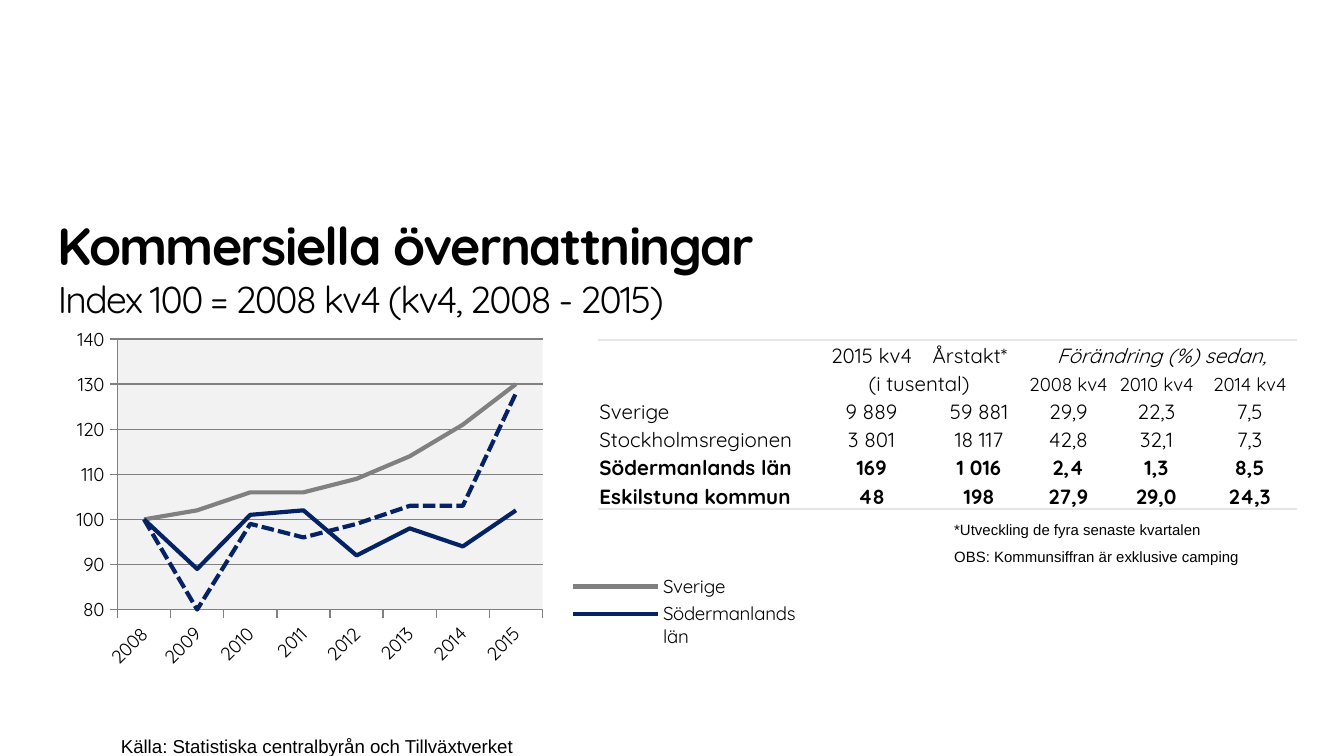
from pptx import Presentation, util as u
from pptx.chart.data import CategoryChartData
from pptx.dml.color import RGBColor
from pptx.enum import chart as ch, dml, text
from pptx.oxml import parse_xml
from pptx.oxml.ns import nsdecls, qn

THEME = {
    "ink": "000000", "grey": "808080", "navy": "052364",
    "rule": "E6E6E6", "plot": "F2F2F2",
    "face": "Quicksand", "note_face": "Arial",
    "title": 28, "subtitle": 20, "table": 11, "small": 10, "note": 8,
}
WIDTH = 10
HEIGHT = WIDTH * 9 / 16

TITLE = [("Kommersiella övernattningar", "title", True),
         ("Index 100 = 2008 kv4 (kv4, 2008 - 2015)", "subtitle", False)]
SOURCE = ["Källa: Statistiska centralbyrån och Tillväxtverket"]
REMARKS = ["*Utveckling de fyra senaste kvartalen",
           "OBS: Kommunsiffran är exklusive camping"]

YEARS = [str(year) for year in range(2008, 2016)]
INDEX = [  # region, colour, dash, values
    ("Sverige", "grey", None, (100, 102, 106, 106, 109, 114, 121, 130)),
    ("Södermanlands län", "navy", None, (100, 89, 101, 102, 92, 98, 94, 102)),
    ("Eskilstuna kommun", "navy", dml.MSO_LINE.SQUARE_DOT,
     (100, 80, 99, 96, 99, 103, 103, 128)),
]
LEGEND_HIDDEN = 2

COLUMNS = [1.59, 0.89, 0.71, 0.62, 0.69, 0.7]
ROW = 0.21
NIGHTS = [
    ["", "2015 kv4", "Årstakt*", "Förändring (%) sedan,", "", ""],
    ["", "(i tusental)", "", "2008 kv4", "2010 kv4", "2014 kv4"],
    ["Sverige", "9 889", "59 881", "29,9", "22,3", "7,5"],
    ["Stockholmsregionen", "3 801", "18 117", "42,8", "32,1", "7,3"],
    ["Södermanlands län", "169", "1 016", "2,4", "1,3", "8,5"],
    ["Eskilstuna kommun", "48", "198", "27,9", "29,0", "24,3"],
]
MERGES = [((0, 3), (0, 5)), ((1, 1), (1, 2))]
LEFT_ALIGNED = {(0, 2)}
ITALIC = {(0, 3)}
BOLD_FROM = 4
NO_STYLE = "{2D5ABB26-0587-4C30-8999-92F81FD0307C}"


def inches(*lengths):
    return [u.Inches(length) for length in lengths]


def rgb(name):
    return RGBColor.from_string(THEME[name])


def style(font, size, face="face", **extra):
    values = {"size": u.Pt(THEME[size]), "name": THEME[face], **extra}
    for key, value in values.items():
        setattr(font, key, value)
    font.color.rgb = rgb("ink")


def set_frame(frame, **extra):
    values = {"margin_left": 0, "margin_right": 0, "margin_top": 0,
              "margin_bottom": 0, "vertical_anchor": text.MSO_ANCHOR.TOP, **extra}
    for key, value in values.items():
        setattr(frame, key, value)


def add_title(slide):
    title = slide.shapes.title
    title.left, title.top, title.width, title.height = inches(0.43, 1.59, 8.14, 0.8)
    set_frame(title.text_frame, word_wrap=True, auto_size=text.MSO_AUTO_SIZE.NONE)
    paragraph = title.text_frame.paragraphs[0]
    paragraph.alignment = text.PP_ALIGN.LEFT
    for i, (words, size, bold) in enumerate(TITLE):
        if i:
            paragraph.add_line_break()
        run = paragraph.add_run()
        run.text = words
        style(run.font, size, bold=bold)
        run._r.get_or_add_rPr().set("spc", "-90")


def add_notes_text(slide, lines, box, size, spacing):
    frame = slide.shapes.add_textbox(*inches(*box)).text_frame
    set_frame(frame, word_wrap=True)
    for i, line in enumerate(lines):
        paragraph = frame.paragraphs[0] if i == 0 else frame.add_paragraph()
        paragraph.line_spacing = spacing
        run = paragraph.add_run()
        run.text = line
        style(run.font, size, "note_face")


def add_rule(cell, side):
    """Draw a light line along one side of a cell (lnT or lnB)."""
    cell._tc.get_or_add_tcPr().insert(0, parse_xml(
        f'<a:{side} {nsdecls("a")} w="12700"><a:solidFill>'
        f'<a:srgbClr val="{THEME["rule"]}"/></a:solidFill></a:{side}>'))


def add_nights_table(slide):
    last = len(NIGHTS) - 1
    box = inches(4.45, 2.53, sum(COLUMNS), ROW * len(NIGHTS))
    table = slide.shapes.add_table(len(NIGHTS), len(COLUMNS), *box).table
    table.first_row = table.horz_banding = False
    table._tbl.tblPr.find(qn("a:tableStyleId")).text = NO_STYLE
    for column, width in zip(table.columns, COLUMNS):
        column.width = u.Inches(width)
    for r, row in enumerate(NIGHTS):
        table.rows[r].height = u.Inches(ROW)
        for c, words in enumerate(row):
            cell = table.cell(r, c)
            for side in ("left", "right", "top"):
                setattr(cell, f"margin_{side}", u.Inches(0.01))
            cell.margin_bottom = 0
            cell.vertical_anchor = text.MSO_ANCHOR.BOTTOM
            cell.fill.background()
            if r in (0, last):
                add_rule(cell, "lnB" if r else "lnT")
            paragraph = cell.text_frame.paragraphs[0]
            left = c == 0 or (r, c) in LEFT_ALIGNED
            paragraph.alignment = text.PP_ALIGN.LEFT if left else text.PP_ALIGN.CENTER
            if words:
                run = paragraph.add_run()
                run.text = words
                style(run.font, "small" if r == 1 and c > 2 else "table",
                      bold=r >= BOLD_FROM, italic=(r, c) in ITALIC)
            else:
                paragraph._p.get_or_add_endParaRPr().set("sz", str(THEME["table"] * 100))
    for start, end in MERGES:
        table.cell(*start).merge(table.cell(*end))


def place(part, position, x, y, w, h, inner=False):
    """Give the plot area or legend a fixed place, as shares of the chart."""
    for old in part.findall(qn("c:layout")):
        part.remove(old)
    target = '<c:layoutTarget val="inner"/>' if inner else ""
    modes = "".join(f'<c:{axis}Mode val="edge"/>' for axis in "xy")
    shares = "".join(f'<c:{key} val="{value}"/>'
                     for key, value in zip("xywh", (x, y, w, h)))
    part.insert(position, parse_xml(
        f'<c:layout {nsdecls("c")}><c:manualLayout>{target}{modes}{shares}'
        '</c:manualLayout></c:layout>'))


def add_index_chart(slide):
    data = CategoryChartData(number_format="0")
    data.categories = YEARS
    for region, _, _, values in INDEX:
        data.add_series(region, values)
    chart = slide.shapes.add_chart(
        ch.XL_CHART_TYPE.LINE, *inches(0.43, 2.39, 5.55, 2.65), data).chart
    chart.has_title = False
    style(chart.font, "small")
    chart.plots[0].vary_by_categories = False
    for series, (_, colour, dash, _) in zip(chart.plots[0].series, INDEX):
        series.smooth = False
        series.marker.style = ch.XL_MARKER_STYLE.NONE
        series.format.line.width = u.Pt(2.25)
        series.format.line.color.rgb = rgb(colour)
        if dash:
            series.format.line.dash_style = dash

    values, years = chart.value_axis, chart.category_axis
    values.minimum_scale, values.maximum_scale, values.major_unit = 80, 140, 10
    values.has_major_gridlines = True
    values.tick_labels.number_format = "0"
    values.tick_labels.number_format_is_linked = False
    years.tick_labels.font.size = u.Pt(THEME["small"])
    years._element.txPr.bodyPr.set("rot", "-2700000")
    for axis in (values, years):
        axis.major_tick_mark = ch.XL_TICK_MARK.OUTSIDE
    for line in (values.format.line, years.format.line, values.major_gridlines.format.line):
        line.color.rgb = rgb("grey")
        line.width = u.Pt(0.75)

    area = chart._chartSpace.chart.plotArea
    place(area, 0, 0.08, 0.05, 0.57, 0.76, inner=True)
    area.append(parse_xml(
        f'<c:spPr {nsdecls("c", "a")}><a:solidFill><a:srgbClr val="{THEME["plot"]}"/>'
        '</a:solidFill></c:spPr>'))

    chart.has_legend = True
    chart.legend.position = ch.XL_LEGEND_POSITION.RIGHT
    chart.legend.include_in_layout = False
    legend = chart.legend._element
    place(legend, 1, 0.68, 0.7, 0.32, 0.23)
    legend.insert(1, parse_xml(
        f'<c:legendEntry {nsdecls("c")}><c:idx val="{LEGEND_HIDDEN}"/>'
        '<c:delete val="1"/></c:legendEntry>'))


def main():
    deck = Presentation()
    deck.slide_width, deck.slide_height = inches(WIDTH, HEIGHT)
    slide = deck.slides.add_slide(deck.slide_layouts.get_by_name("Title Only"))
    add_title(slide)
    add_notes_text(slide, SOURCE, (0.9, 5.3, 3.1, 0.32), "small", u.Pt(24))
    add_nights_table(slide)
    add_notes_text(slide, REMARKS, (7.1, 3.81, 2.3, 0.5), "note", 1.5)
    add_index_chart(slide)
    deck.save("out.pptx")


if __name__ == "__main__":
    main()
